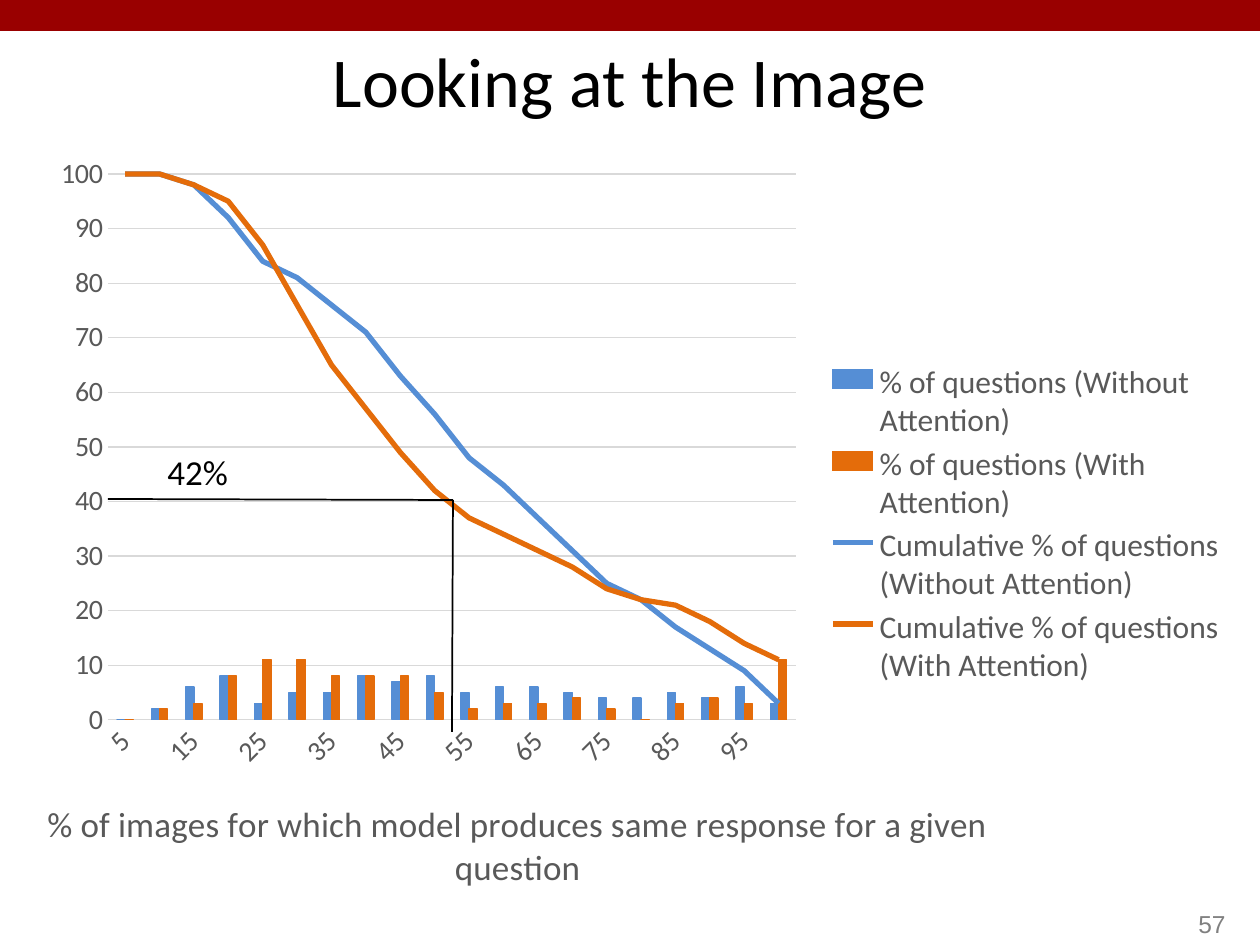
"""Build the "Looking at the Image" slide with its combined column and line chart."""
import copy

import lxml.etree
import pptx
import pptx.chart.data
import pptx.dml.color
import pptx.enum.chart
import pptx.enum.shapes
import pptx.enum.text
import pptx.oxml
import pptx.oxml.ns
import pptx.util

EMU_PER_PX = 914400 / 126
BLACK = pptx.dml.color.RGBColor(0x00, 0x00, 0x00)
BAND_RED = pptx.dml.color.RGBColor(0x99, 0x00, 0x00)
BLUE = pptx.dml.color.RGBColor(0x55, 0x8E, 0xD5)
ORANGE = pptx.dml.color.RGBColor(0xE4, 0x6C, 0x0A)
LABEL_GREY = pptx.dml.color.RGBColor(0x59, 0x59, 0x59)
GRID_GREY = pptx.dml.color.RGBColor(0xD9, 0xD9, 0xD9)
NUMBER_GREY = pptx.dml.color.RGBColor(0x80, 0x80, 0x80)

CHART_BOX = (38, 142, 1200, 762)
AXIS_CAPTION = "% of images for which model produces same response for a given question"
QUESTIONS = {
    "% of questions (Without Attention)":
        (0, 2, 6, 8, 3, 5, 5, 8, 7, 8, 5, 6, 6, 5, 4, 4, 5, 4, 6, 3),
    "% of questions (With Attention)":
        (0, 2, 3, 8, 11, 11, 8, 8, 8, 5, 2, 3, 3, 4, 2, 0, 3, 4, 3, 11),
    "Cumulative % of questions (Without Attention)":
        (100, 100, 98, 92, 84, 81, 76, 71, 63, 56, 48, 43, 37, 31, 25, 22, 17, 13, 9, 3),
    "Cumulative % of questions (With Attention)":
        (100, 100, 98, 95, 87, 76, 65, 57, 49, 42, 37, 34, 31, 28, 24, 22, 21, 18, 14, 11),
}


def px(length):
    """Turn pixels into EMU."""
    return pptx.util.Emu(round(length * EMU_PER_PX))


def apply(target, **values):
    """Set each named attribute on the target."""
    for name, value in values.items():
        setattr(target, name, value)


def set_font(font, size, color, name="Calibri"):
    """Give a font its size, colour and typeface."""
    apply(font, size=pptx.util.Pt(size), name=name, bold=False)
    font.color.rgb = color


def set_line(line, color, width):
    """Give a line its colour and width in points."""
    line.color.rgb = color
    line.width = pptx.util.Pt(width)


def write(shape, text, size, color, align, anchor, name="Calibri"):
    """Fill a shape with one formatted paragraph."""
    frame = shape.text_frame
    apply(frame, text=text, word_wrap=True, vertical_anchor=anchor)
    frame.paragraphs[0].alignment = align
    set_font(frame.paragraphs[0].runs[0].font, size, color, name)


def add_title(slide, text, box):
    """Place and format the title placeholder."""
    title = slide.shapes.title
    apply(title, **dict(zip(("left", "top", "width", "height"), map(px, box))))
    write(title, text, 40, BLACK, pptx.enum.text.PP_ALIGN.CENTER,
          pptx.enum.text.MSO_ANCHOR.MIDDLE)


def add_label(slide, text, box, **style):
    """Add a text box."""
    write(slide.shapes.add_textbox(*map(px, box)), text, **style)


def add_band(slide, box, color):
    """Add a plain filled rectangle."""
    band = slide.shapes.add_shape(pptx.enum.shapes.MSO_SHAPE.RECTANGLE, *map(px, box))
    band.shadow.inherit = False
    band.fill.solid()
    band.fill.fore_color.rgb = color
    band.line.fill.background()


def add_guide(slide, *ends):
    """Add a thin straight line without a shadow."""
    guide = slide.shapes.add_connector(pptx.enum.shapes.MSO_CONNECTOR.STRAIGHT, *map(px, ends))
    set_line(guide.line, BLACK, 1)
    lxml.etree.SubElement(guide.element.spPr, pptx.oxml.ns.qn("a:effectLst"))


def set_layout(element, index, left, top, width=0, height=0, inner=False):
    """Fix a chart part at slide pixels inside the chart box."""
    for old in element.findall(pptx.oxml.ns.qn("c:layout")):
        element.remove(old)
    chart_left, chart_top, chart_width, chart_height = CHART_BOX
    settings = {"layoutTarget": "inner"} if inner else {}
    settings.update(xMode="edge", yMode="edge",
                    x=round((left - chart_left) / chart_width, 4),
                    y=round((top - chart_top) / chart_height, 4))
    if width:
        settings.update(w=round(width / chart_width, 4), h=round(height / chart_height, 4))
    layout = lxml.etree.Element(pptx.oxml.ns.qn("c:layout"))
    manual = lxml.etree.SubElement(layout, pptx.oxml.ns.qn("c:manualLayout"))
    for name, value in settings.items():
        lxml.etree.SubElement(manual, pptx.oxml.ns.qn("c:" + name)).set("val", str(value))
    element.insert(index, layout)


def split_lines(chart):
    """Move the cumulative series into a line plot on the same axes."""
    bars = chart.plots[0]
    bar_xml = chart._chartSpace.find(".//" + pptx.oxml.ns.qn("c:barChart"))
    line_xml = pptx.oxml.parse_xml(
        f'<c:lineChart {pptx.oxml.ns.nsdecls("c")}><c:grouping val="standard"/>'
        '<c:varyColors val="0"/><c:marker val="1"/></c:lineChart>')
    marker = line_xml[-1]
    for series in bar_xml.findall(pptx.oxml.ns.qn("c:ser"))[2:]:
        for flag in series.findall(pptx.oxml.ns.qn("c:invertIfNegative")):
            series.remove(flag)
        marker.addprevious(series)
    for axis_id in bar_xml.findall(pptx.oxml.ns.qn("c:axId")):
        line_xml.append(copy.deepcopy(axis_id))
    bar_xml.addnext(line_xml)
    apply(bars, gap_width=219, overlap=0, vary_by_categories=False)


def color_series(chart):
    """Colour the columns and the cumulative lines."""
    columns, lines = chart.plots
    for series, color in zip(columns.series, (BLUE, ORANGE)):
        series.format.fill.solid()
        series.format.fill.fore_color.rgb = color
        set_line(series.format.line, color, 0.75)
    for series, color in zip(lines.series, (BLUE, ORANGE)):
        set_line(series.format.line, color, 3)
        series.smooth = False
        series.marker.style = pptx.enum.chart.XL_MARKER_STYLE.NONE


def format_axes(chart):
    """Format both axes, the gridlines and the axis caption."""
    categories, percent = chart.category_axis, chart.value_axis
    for axis in (categories, percent):
        apply(axis, major_tick_mark=pptx.enum.chart.XL_TICK_MARK.NONE,
              minor_tick_mark=pptx.enum.chart.XL_TICK_MARK.NONE)
        set_font(axis.tick_labels.font, 16, LABEL_GREY)
    apply(percent, minimum_scale=0, maximum_scale=100, major_unit=10, has_major_gridlines=True)
    set_line(percent.major_gridlines.format.line, GRID_GREY, 0.75)
    percent.format.line.fill.background()
    set_line(categories.format.line, GRID_GREY, 0.75)
    labels = categories._element.find(pptx.oxml.ns.qn("c:txPr"))
    labels.find(pptx.oxml.ns.qn("a:bodyPr")).set("rot", "-2700000")
    caption = categories.axis_title
    caption.text_frame.text = AXIS_CAPTION
    set_font(caption.text_frame.paragraphs[0].runs[0].font, 20, LABEL_GREY)
    set_layout(caption._element, 1, 41, 793)


def add_questions_chart(slide):
    """Add the chart of questions by share of images with the same response."""
    questions = pptx.chart.data.CategoryChartData()
    questions.categories = [str(share) for share in range(5, 101, 5)]
    for name, values in QUESTIONS.items():
        questions.add_series(name, values)
    chart = slide.shapes.add_chart(pptx.enum.chart.XL_CHART_TYPE.COLUMN_CLUSTERED,
                                   *map(px, CHART_BOX), questions).chart
    apply(chart, has_title=False, has_legend=True)
    set_font(chart.font, 10, BLACK)
    split_lines(chart)
    color_series(chart)
    format_axes(chart)
    apply(chart.legend, position=pptx.enum.chart.XL_LEGEND_POSITION.RIGHT,
          include_in_layout=False)
    set_font(chart.legend.font, 18, LABEL_GREY)
    set_layout(chart.legend._element, 1, 825, 358, 402, 332)
    plot_area = chart._chartSpace.find(".//" + pptx.oxml.ns.qn("c:plotArea"))
    set_layout(plot_area, 0, 108, 174, 688, 546, inner=True)


def main():
    """Build and save the slide."""
    deck = pptx.Presentation()
    apply(deck, slide_width=px(1260), slide_height=px(945))
    slide = deck.slides.add_slide(deck.slide_layouts[5])
    align, anchor = pptx.enum.text.PP_ALIGN, pptx.enum.text.MSO_ANCHOR
    add_band(slide, (0, 0, 1260, 31), BAND_RED)
    add_title(slide, "Looking at the Image", (94, 32, 1071, 94))
    add_questions_chart(slide)
    add_guide(slide, 452, 732, 453, 500)
    add_guide(slide, 108, 499, 453, 500)
    add_label(slide, "42%", (155, 444, 125, 55), size=20, color=BLACK,
              align=align.LEFT, anchor=anchor.TOP)
    add_label(slide, "57", (976, 882, 262, 63), size=14, color=NUMBER_GREY,
              align=align.RIGHT, anchor=anchor.BOTTOM, name="Arial")
    deck.save("out.pptx")


if __name__ == "__main__":
    main()
